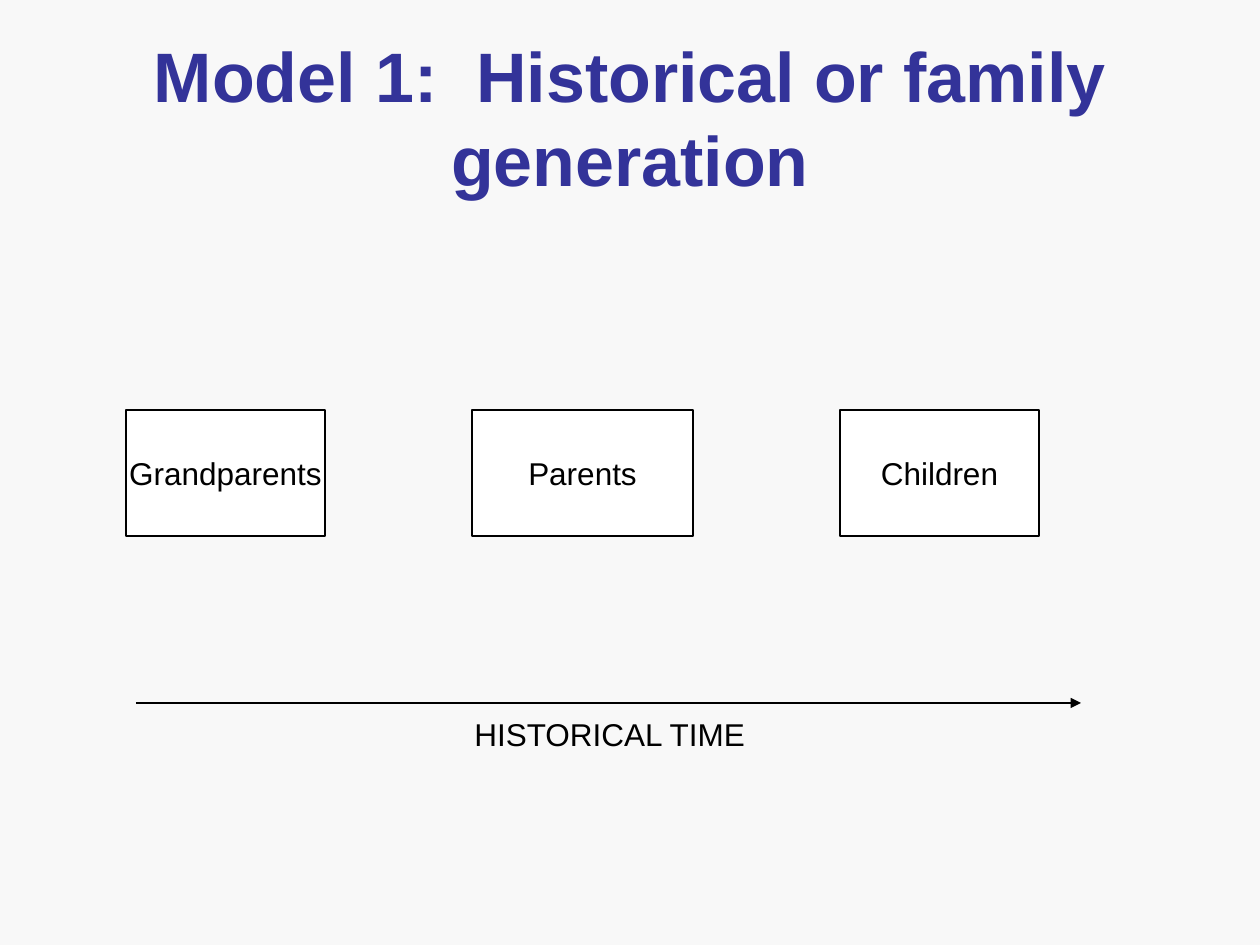
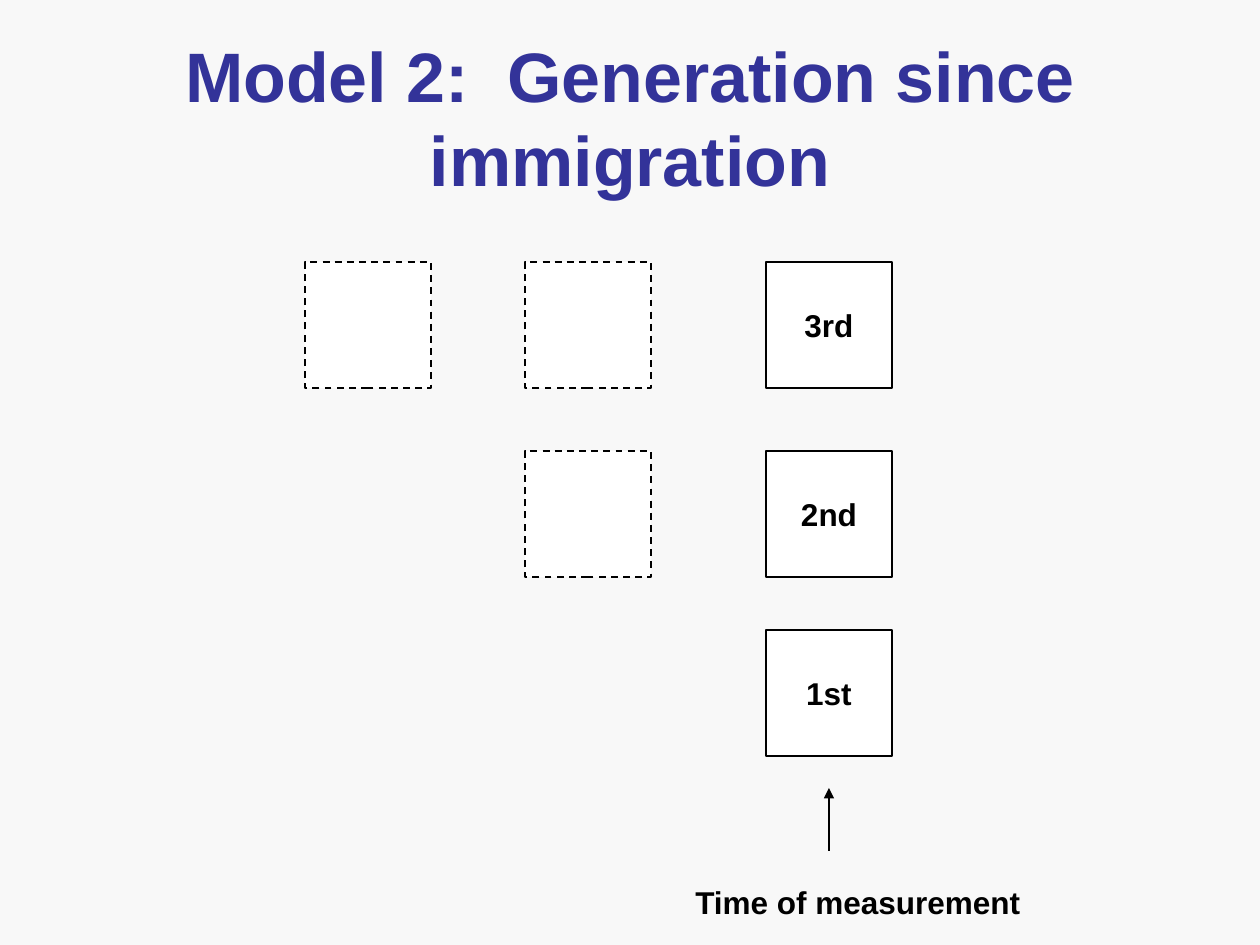
from lxml import etree
from pptx import Presentation
from pptx import util as u
from pptx.dml.color import RGBColor
from pptx.enum import dml, shapes, text
from pptx.oxml.ns import qn

PX = u.Inches(1) / 126
FONT = "Arial"
PAPER = RGBColor(0xF8, 0xF8, 0xF8)
INDIGO = RGBColor(0x33, 0x33, 0x99)
BLACK = RGBColor(0, 0, 0)
WHITE = RGBColor(0xFF, 0xFF, 0xFF)
BOX = 126


def px(*lengths):
    return [u.Emu(round(n * PX)) for n in lengths]


def add_run(p, words, size=18, color=BLACK, bold=False):
    r = p.add_run()
    r.text = words
    r.font.name = FONT
    r.font.size = u.Pt(size)
    r.font.color.rgb = color
    r.font.bold = bold


def add_titled_slide(prs, title):
    s = prs.slides.add_slide(prs.slide_layouts[5])
    sp = s.shapes.title
    sp.left, sp.top, sp.width, sp.height = px(63, 38, 1134, 157)
    tf = sp.text_frame
    tf.auto_size = text.MSO_AUTO_SIZE.NONE
    tf.vertical_anchor = text.MSO_ANCHOR.MIDDLE
    p = tf.paragraphs[0]
    p.alignment = text.PP_ALIGN.CENTER
    p.line_spacing = u.Pt(48)
    add_run(p, title, 40, INDIGO, True)
    return s


def add_box(s, x, y, w=BOX, label="", bold=False):
    """A labelled box has a solid outline, an empty one a dashed outline."""
    sp = s.shapes.add_shape(shapes.MSO_SHAPE.RECTANGLE, *px(x, y, w, BOX))
    sp.shadow.inherit = False
    sp.fill.solid()
    sp.fill.fore_color.rgb = WHITE
    sp.line.color.rgb = BLACK
    sp.line.width = u.Pt(1.5 if label else 1)
    if not label:
        sp.line.dash_style = dml.MSO_LINE.DASH
        return
    tf = sp.text_frame
    tf.word_wrap = False
    tf.vertical_anchor = text.MSO_ANCHOR.MIDDLE
    p = tf.paragraphs[0]
    p.alignment = text.PP_ALIGN.CENTER
    add_run(p, label, bold=bold)


def add_arrow(s, x1, y1, x2, y2):
    cx = s.shapes.add_connector(shapes.MSO_CONNECTOR.STRAIGHT, *px(x1, y1, x2, y2))
    cx.line.color.rgb = BLACK
    cx.line.width = u.Pt(1.5)
    etree.SubElement(cx.line._get_or_add_ln(), qn("a:tailEnd"), type="triangle")
    etree.SubElement(cx._element.spPr, qn("a:effectLst"))


def add_caption(s, x, y, w, words, bold=False):
    tf = s.shapes.add_textbox(*px(x, y, w, 50)).text_frame
    tf.word_wrap = True
    tf.auto_size = text.MSO_AUTO_SIZE.SHAPE_TO_FIT_TEXT
    add_run(tf.paragraphs[0], words, bold=bold)


def build_family_model(prs):
    s = add_titled_slide(prs, "Model 1:  Historical or family generation")
    # Family generations, evenly spaced
    x, gap = 126, 147
    for label, w in (("Grandparents", 199), ("Parents", 221), ("Children", 199)):
        add_box(s, x, 410, w, label)
        x += w + gap
    # Time axis
    add_arrow(s, 136, 703, 1081, 703)
    add_caption(s, 462, 709, 369, "HISTORICAL TIME")


def build_immigration_model(prs):
    s = add_titled_slide(prs, "Model 2:  Generation since immigration")
    # Each generation has one earlier generation fewer than the row above
    measured, earlier = 766, (525, 305)
    rows = ((262, "3rd"), (451, "2nd"), (630, "1st"))
    for i, (y, label) in enumerate(rows):
        add_box(s, measured, y, label=label, bold=True)
        for x in earlier[:len(earlier) - i]:
            add_box(s, x, y)
    # Measurement marker
    center = measured + BOX // 2
    add_arrow(s, center, 851, center, 788)
    add_caption(s, 683, 877, 378, "Time of measurement", True)


def main():
    prs = Presentation()
    prs.slide_width, prs.slide_height = px(1260, 945)
    # Shared background
    fill = prs.slide_master.background.fill
    fill.solid()
    fill.fore_color.rgb = PAPER
    build_family_model(prs)
    build_immigration_model(prs)
    prs.save("out.pptx")


if __name__ == "__main__":
    main()
